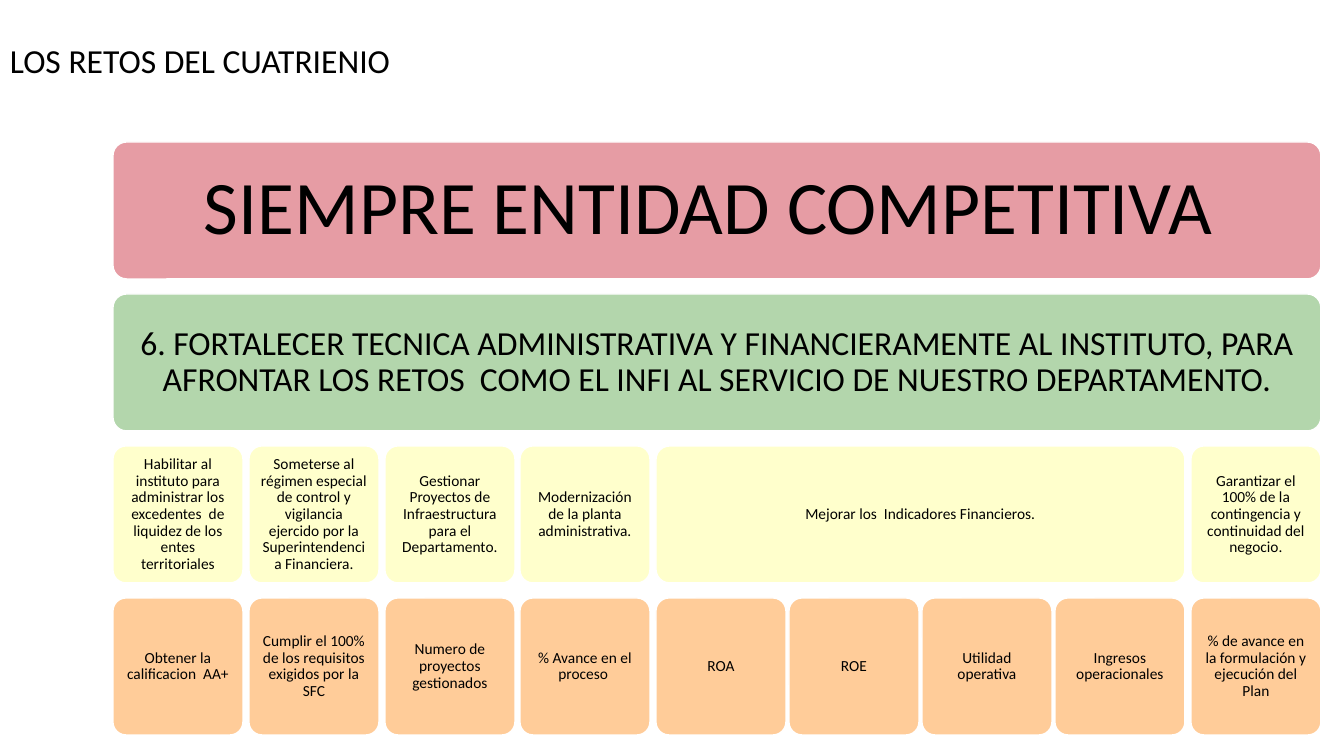
from dataclasses import dataclass

from pptx import Presentation
from pptx.dml.color import RGBColor
from pptx.enum.shapes import MSO_SHAPE
from pptx.enum.text import MSO_ANCHOR, PP_ALIGN
from pptx.util import Emu, Pt

EMU_PER_PX = 914400 / 100.8


def px(n):
    return Emu(round(n * EMU_PER_PX))


@dataclass(frozen=True)
class Theme:
    font: str = "Calibri"
    ink: str = "000000"
    edge: str = "FFFFFF"
    slogan: str = "E69CA4"
    goal: str = "B3D6AC"
    challenge: str = "FFFFCC"
    indicator: str = "FFCC99"
    slogan_size: int = 54
    heading_size: int = 24
    small_size: int = 11


class Board:
    def __init__(self, slide, theme):
        self.s = slide
        self.theme = theme

    def add_text(self, shape, text, size, align):
        tf = shape.text_frame
        tf.word_wrap = True
        tf.vertical_anchor = MSO_ANCHOR.MIDDLE
        p = tf.paragraphs[0]
        p.alignment = align
        p.line_spacing = 0.9
        r = p.add_run()
        r.text = text
        r.font.name = self.theme.font
        r.font.size = Pt(size)
        r.font.color.rgb = RGBColor.from_string(self.theme.ink)

    def title(self, text, x, y, w, h):
        sp = self.s.shapes.add_textbox(px(x), px(y), px(w), px(h))
        self.add_text(sp, text, self.theme.heading_size, PP_ALIGN.LEFT)

    def card(self, text, x, y, w, h, fill, size, inset):
        sp = self.s.shapes.add_shape(MSO_SHAPE.ROUNDED_RECTANGLE, px(x), px(y), px(w), px(h))
        sp.adjustments[0] = 0.1
        sp.shadow.inherit = False
        sp.fill.solid()
        sp.fill.fore_color.rgb = RGBColor.from_string(fill)
        sp.line.color.rgb = RGBColor.from_string(self.theme.edge)
        sp.line.width = Pt(1)
        tf = sp.text_frame
        tf.margin_left = tf.margin_right = tf.margin_top = tf.margin_bottom = px(inset)
        self.add_text(sp, text, size, PP_ALIGN.CENTER)


CHALLENGES = [
    ("Habilitar al instituto para administrar los excedentes  de liquidez de los entes territoriales",
     ["Obtener la calificacion  AA+"]),
    ("Someterse al régimen especial de control y vigilancia ejercido por la Superintendencia Financiera.",
     ["Cumplir el 100% de los requisitos exigidos por la SFC"]),
    ("Gestionar Proyectos de Infraestructura para el Departamento.",
     ["Numero de proyectos gestionados"]),
    ("Modernización de la planta administrativa.",
     ["% Avance en el proceso "]),
    ("Mejorar los  Indicadores Financieros.",
     ["ROA", "ROE", "Utilidad operativa", "Ingresos operacionales"]),
    ("Garantizar el 100% de la contingencia y continuidad del negocio.",
     ["% de avance en la formulación y ejecución del Plan"]),
]
LEFT, TOP, WIDTH, HEIGHT = 113, 142, 1208, 137
ROW_STEP = 152
CELL, INNER_GAP = 130, 3


def main():
    prs = Presentation()
    prs.slide_width, prs.slide_height = px(1344), px(756)
    theme = Theme()
    board = Board(prs.slides.add_slide(prs.slide_layouts[6]), theme)
    rows = [TOP + i * ROW_STEP for i in range(4)]

    board.card("SIEMPRE ENTIDAD COMPETITIVA ", LEFT, rows[0], WIDTH, HEIGHT,
               theme.slogan, theme.slogan_size, 27)
    board.card("6. FORTALECER TECNICA ADMINISTRATIVA Y FINANCIERAMENTE AL INSTITUTO, "
               "PARA AFRONTAR LOS RETOS  COMO EL INFI AL SERVICIO DE NUESTRO DEPARTAMENTO.",
               LEFT, rows[1], WIDTH, HEIGHT, theme.goal, theme.heading_size, 14)

    widths = [len(inds) * (CELL + INNER_GAP) - INNER_GAP for _, inds in CHALLENGES]
    gap = (WIDTH - sum(widths)) / (len(widths) - 1)
    for i, (challenge, indicators) in enumerate(CHALLENGES):
        x = round(LEFT + sum(widths[:i]) + i * gap)
        board.card(challenge, x, rows[2], widths[i], HEIGHT,
                   theme.challenge, theme.small_size, 8)
        for j, indicator in enumerate(indicators):
            board.card(indicator, x + j * (CELL + INNER_GAP), rows[3], CELL, HEIGHT,
                       theme.indicator, theme.small_size, 8)

    board.title("LOS RETOS DEL CUATRIENIO", 0, 0, 761, 125)
    prs.save("out.pptx")


if __name__ == "__main__":
    main()
